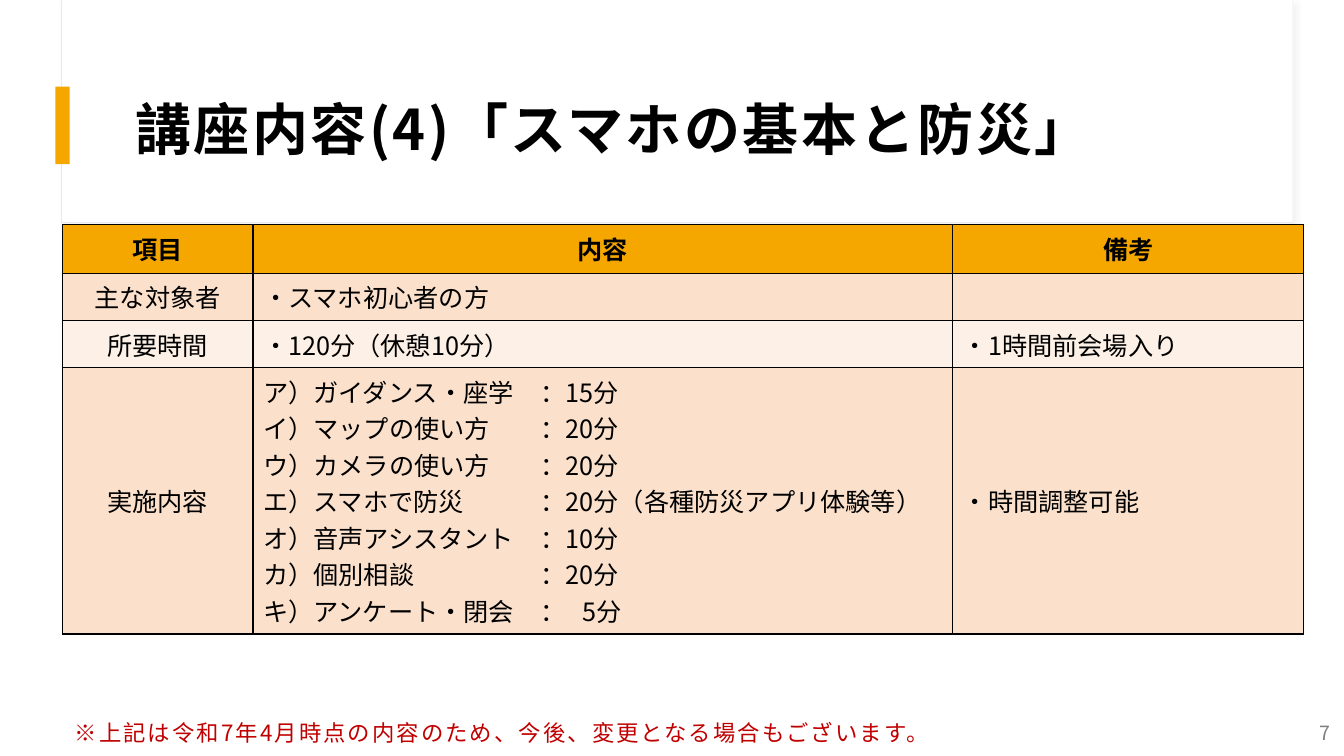
"""Build the course outline slide on smartphone basics and disaster readiness."""
from lxml import etree
from pptx import Presentation
from pptx.dml.color import RGBColor
from pptx.enum import shapes, text
from pptx.oxml import ns
from pptx.util import Inches, Pt

FONT = "Noto Sans CJK JP"
BLACK = RGBColor(0, 0, 0)
WHITE = RGBColor(255, 255, 255)
EDGE = RGBColor(0xE9, 0xE9, 0xE9)
GOLD = RGBColor(0xF5, 0xA7, 0x00)
PEACH = RGBColor(0xFB, 0xE1, 0xCC)
CREAM = RGBColor(0xFD, 0xF1, 0xE7)
RED = RGBColor(0xC0, 0, 0)
GRAY = RGBColor(0x80, 0x80, 0x80)
LEFT, MID, RIGHT = text.PP_ALIGN.LEFT, text.PP_ALIGN.CENTER, text.PP_ALIGN.RIGHT
MIDDLE, BOTTOM = text.MSO_ANCHOR.MIDDLE, text.MSO_ANCHOR.BOTTOM


def add(parent, tag, **attrs):
    return etree.SubElement(parent, ns.qn(tag), attrs)


def write(frame, words, size=18, color=BLACK, bold=False, align=LEFT,
          space=0, line=None, tabs=()):
    for i, part in enumerate(words.split("\n")):
        para = frame.paragraphs[0] if i == 0 else frame.add_paragraph()
        para.alignment = align
        if line:
            para.line_spacing = line
        if tabs:
            stops = add(para._p.get_or_add_pPr(), "a:tabLst")
            for stop in tabs:
                add(stops, "a:tab", pos=str(Inches(stop)), algn="l")
        run = para.add_run()
        run.text = part
        font = run.font
        font.name, font.size, font.bold = FONT, Pt(size), bold
        font.color.rgb = color
        props = run._r.get_or_add_rPr()
        add(props, "a:ea", typeface=FONT)
        if space:
            props.set("spc", str(round(space * 100)))


deck = Presentation()
deck.slide_width, deck.slide_height = Inches(13.33), Inches(7.5)
slide = deck.slides.add_slide(deck.slide_layouts[6])

panels = [
    ((0.61, 0, 12.21, 2.21), WHITE, EDGE),
    ((0.62, 0, 12.2, 2.2), WHITE, None),
    ((0.55, 0.86, 0.14, 0.77), GOLD, None),
]
for box, fill, edge in panels:
    panel = slide.shapes.add_shape(shapes.MSO_SHAPE.RECTANGLE, *map(Inches, box))
    panel.shadow.inherit = False
    panel.fill.solid()
    panel.fill.fore_color.rgb = fill
    if edge is None:
        panel.line.fill.background()
    else:
        panel.line.color.rgb = edge
        panel.line.width = Pt(0.75)
        glow = add(panel._element.spPr.find(ns.qn("a:effectLst")), "a:outerShdw",
                   blurRad=str(Pt(4)), dist=str(Pt(3)), dir="2700000")
        add(add(glow, "a:srgbClr", val="D9D9D9"), "a:alpha", val="30000")

PAD = (0.12, 0.12, 0.12, 0.1)
notes = [
    ((1.22, 0.6, 11.12, 1.29), PAD, MIDDLE, "講座内容(4)「スマホの基本と防災」",
     dict(size=40, bold=True, space=1.8, line=1.05)),
    ((0.62, 6.67, 12.31, 0.83), PAD, BOTTOM,
     "※上記は令和7年4月時点の内容のため、今後、変更となる場合もございます。",
     dict(size=16, color=RED, space=1.5)),
    ((11.9, 7.13, 1.3, 0.28), (0, 0, 0, 0), MIDDLE, "7",
     dict(size=14, color=GRAY, align=RIGHT)),
]
for box, pad, anchor, words, style in notes:
    frame = slide.shapes.add_textbox(*map(Inches, box)).text_frame
    frame.word_wrap = True
    frame.vertical_anchor = anchor
    (frame.margin_left, frame.margin_top,
     frame.margin_right, frame.margin_bottom) = map(Inches, pad)
    write(frame, words, **style)

steps = [
    ("ア）ガイダンス・座学", "15分"),
    ("イ）マップの使い方", "20分"),
    ("ウ）カメラの使い方", "20分"),
    ("エ）スマホで防災", "20分（各種防災アプリ体験等）"),
    ("オ）音声アシスタント", "10分"),
    ("カ）個別相談", "20分"),
    ("キ）アンケート・閉会", "\t5分"),
]
plan = "\n".join(f"{name}\t：{time}" for name, time in steps)
rows = [
    (0.48, GOLD, ("項目", "内容", "備考")),
    (0.47, PEACH, ("主な対象者", "・スマホ初心者の方", "")),
    (0.47, CREAM, ("所要時間", "・120分（休憩10分）", "・1時間前会場入り")),
    (2.64, PEACH, ("実施内容", plan, "・時間調整可能")),
]
table = slide.shapes.add_table(4, 3, Inches(0.62), Inches(2.23),
                               Inches(12.31), Inches(4.06)).table
for col, width in zip(table.columns, (1.89, 6.94, 3.48)):
    col.width = Inches(width)
for r, (height, fill, row) in enumerate(rows):
    table.rows[r].height = Inches(height)
    for c, words in enumerate(row):
        cell = table.cell(r, c)
        cell.vertical_anchor = MIDDLE
        if words:
            write(cell.text_frame, words, bold=r == 0,
                  align=MID if r == 0 or c == 0 else LEFT,
                  tabs=(2.75, 3.17) if words == plan else ())
        props = cell._tc.get_or_add_tcPr()
        for side in ("a:lnL", "a:lnR", "a:lnT", "a:lnB"):
            rule = add(props, side, w=str(Pt(1)))
            add(add(rule, "a:solidFill"), "a:srgbClr", val=str(BLACK))
        cell.fill.solid()
        cell.fill.fore_color.rgb = fill

deck.save("out.pptx")
